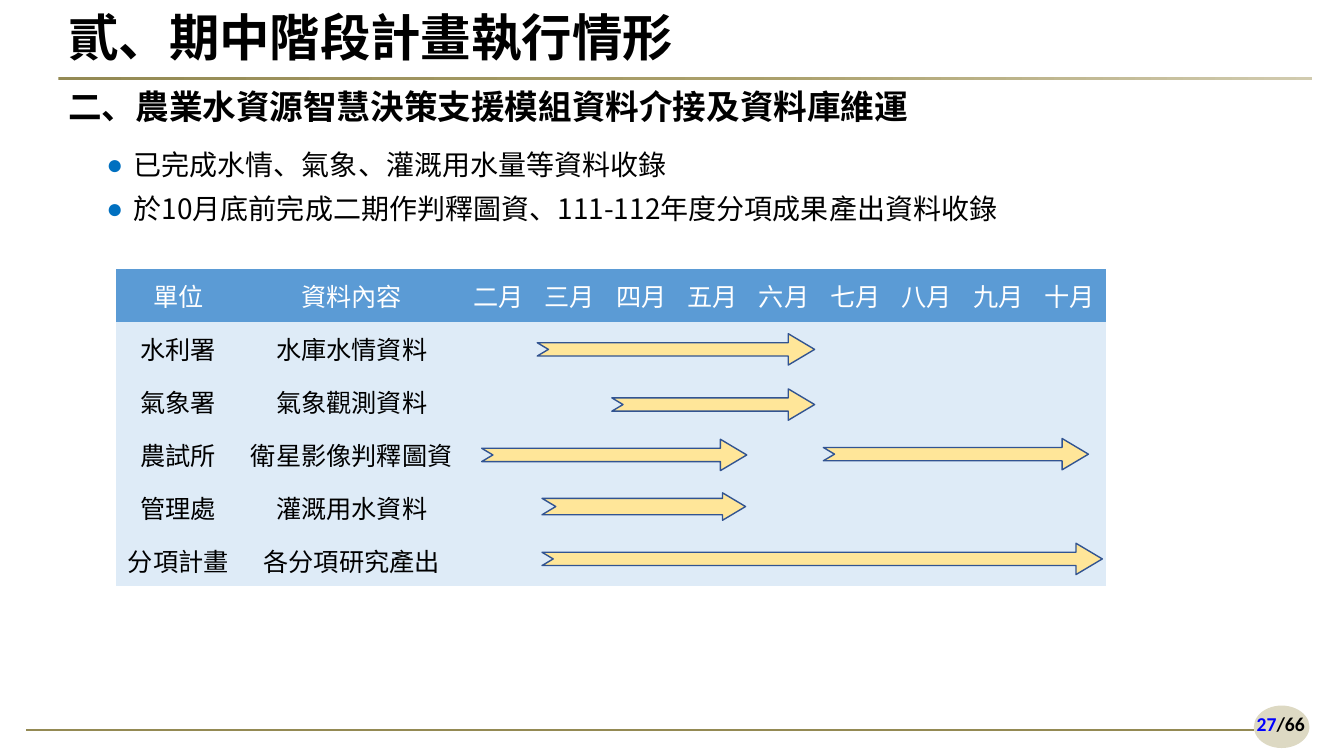
from copy import deepcopy
from dataclasses import dataclass

from lxml.etree import SubElement as sub
from pptx import Presentation
from pptx.dml.color import RGBColor as Rgb
from pptx.enum.shapes import MSO_CONNECTOR as Link, MSO_SHAPE as Kind
from pptx.enum.text import MSO_ANCHOR as Anchor, PP_ALIGN as Align
from pptx.oxml.ns import qn
from pptx.util import Cm, Pt


@dataclass(frozen=True)
class Theme:
    face: str = "Noto Sans CJK SC"
    latin: str = "Calibri"
    black: str = "000000"
    white: str = "FFFFFF"
    gold: str = "948A54"
    fade: tuple = ((0, "948A54"), (0.55, "AA9F6A"), (1, "D1CBAF"))
    badge: str = "DDD9C3"
    page: str = "0000FF"
    dot: str = "0070C0"
    head: str = "5B9BD5"
    body: str = "DEEBF7"
    arrow: str = "FFE699"
    edge: str = "325491"
    title: int = 36
    sub: int = 24
    list: int = 20
    cell: int = 18
    foot: int = 14


THEME = Theme()
HEADS = ["單位", "資料內容"] + [f"{m}月" for m in "二三四五六七八九十"]
ROWS = [
    ("水利署", "水庫水情資料"),
    ("氣象署", "氣象觀測資料"),
    ("農試所", "衛星影像判釋圖資"),
    ("管理處", "灌溉用水資料"),
    ("分項計畫", "各分項研究產出"),
]
WIDTHS = [3.15, 5.59] + [1.8] * 9
SPANS = [
    (10.62, 1.63, 6.99, 0.79, 0.425),
    (12.5, 3.02, 5.11, 0.79, 0.425),
    (9.22, 4.29, 6.68, 0.79, 0.425),
    (17.83, 4.27, 6.68, 0.79, 0.425),
    (10.74, 5.64, 5.13, 0.69, 0.6),
    (10.74, 6.91, 14.12, 0.79, 0.425),
]
ITEMS = [
    "已完成水情、氣象、灌溉用水量等資料收錄",
    "於10月底前完成二期作判釋圖資、111-112年度分項成果產出資料收錄",
]


def style(run, size, color, bold=False, face=THEME.face):
    font = run.font
    font.size, font.bold, font.name = Pt(size), bold, face
    font.color.rgb = Rgb.from_string(color)
    sub(run._r.get_or_add_rPr(), qn("a:ea")).set("typeface", face)


def paint(fill, color):
    fill.solid()
    fill.fore_color.rgb = Rgb.from_string(color)


def add_form(slide, kind, x, y, w, h):
    form = slide.shapes.add_shape(kind, Cm(x), Cm(y), Cm(w), Cm(h))
    form.shadow.inherit = False
    form.line.fill.background()
    return form


def add_box(slide, x, y, w, h, text):
    frame = slide.shapes.add_textbox(Cm(x), Cm(y), Cm(w), Cm(h)).text_frame
    frame.word_wrap = True
    frame.text = text
    return frame


def add_head(slide, x, y, w):
    bar = add_form(slide, Kind.RECTANGLE, x, y + 1.9, w, 0.1)
    bar.fill.gradient()
    bar.fill.gradient_angle = 0
    stops = bar._element.spPr.find(".//" + qn("a:gsLst"))
    stops.append(deepcopy(stops[0]))
    for stop, (place, color) in zip(bar.fill.gradient_stops, THEME.fade):
        stop.position = place
        stop.color.rgb = Rgb.from_string(color)
    title = add_box(slide, x, y, 30.07, 1.98, "貳、期中階段計畫執行情形")
    title.vertical_anchor = Anchor.MIDDLE
    title.paragraphs[0].line_spacing = 0.9
    style(title.paragraphs[0].runs[0], THEME.title, THEME.black, True)
    topic = add_box(slide, x, y + 2, w, 1.4,
                    "二、農業水資源智慧決策支援模組資料介接及資料庫維運")
    topic.paragraphs[0].alignment = Align.JUSTIFY
    style(topic.paragraphs[0].runs[0], THEME.sub, THEME.black, True)


def add_list(slide, x, y, w, h):
    frame = add_box(slide, x, y, w, h, "\n".join(ITEMS))
    for para in frame.paragraphs:
        props = para._p.get_or_add_pPr()
        props.set("marL", str(Cm(1.24)))
        props.set("indent", str(Cm(-0.69)))
        tint = sub(props, qn("a:buClr"))
        sub(tint, qn("a:srgbClr")).set("val", THEME.dot)
        sub(props, qn("a:buFont")).set("typeface", "Arial")
        sub(props, qn("a:buChar")).set("char", "●")
        para.alignment = Align.JUSTIFY
        para.line_spacing = 1.3
        style(para.runs[0], THEME.list, THEME.black)


def add_plan(slide, x, y, h):
    count = len(ROWS) + 1
    frame = slide.shapes.add_table(count, len(HEADS), Cm(x), Cm(y),
                                   Cm(sum(WIDTHS)), Cm(h))
    table = frame.table
    table.first_row = table.horz_banding = False
    look = table._tbl.tblPr.find(qn("a:tableStyleId"))
    look.text = "{2D5ABB26-0587-4C30-8999-92F81FD0307C}"
    for col, width in zip(table.columns, WIDTHS):
        col.width = Cm(width)
    for r, texts in enumerate([HEADS] + ROWS):
        table.rows[r].height = Cm(h / count)
        for c in range(len(HEADS)):
            cell = table.cell(r, c)
            paint(cell.fill, THEME.body if r else THEME.head)
            cell.vertical_anchor = Anchor.MIDDLE
            cell.margin_left = cell.margin_right = Cm(0.1)
            if c < len(texts):
                cell.text = texts[c]
                para = cell.text_frame.paragraphs[0]
                para.alignment = Align.CENTER
                style(para.runs[0], THEME.cell,
                      THEME.black if r else THEME.white)
    for left, top, width, high, shaft in SPANS:
        arrow = add_form(slide, Kind.NOTCHED_RIGHT_ARROW,
                         x + left, y + top, width, high)
        arrow.adjustments[0], arrow.adjustments[1] = shaft, 0.84
        paint(arrow.fill, THEME.arrow)
        paint(arrow.line.fill, THEME.edge)
        arrow.line.width = Pt(1)


def add_foot(slide, x, y, w):
    end = x + w
    badge = add_form(slide, Kind.OVAL, end, y - 0.61, 1.4, 1.07)
    paint(badge.fill, THEME.badge)
    rule = slide.shapes.add_connector(Link.STRAIGHT, Cm(x), Cm(y),
                                      Cm(end), Cm(y))
    rule.line.width = Pt(1.8)
    paint(rule.line.fill, THEME.gold)
    sub(rule._element.spPr, qn("a:effectLst"))
    para = add_box(slide, end - 0.18, y - 0.58, 1.93, 1.02, "27").paragraphs[0]
    para.add_run().text = "/66"
    for run, color in zip(para.runs, (THEME.page, THEME.black)):
        style(run, THEME.foot, color, True, THEME.latin)


def main():
    deck = Presentation()
    deck.slide_width, deck.slide_height = Cm(33.87), Cm(19.05)
    slide = deck.slides.add_slide(deck.slide_layouts[6])
    add_head(slide, 1.47, 0.03, 31.6)
    add_foot(slide, 0.66, 18.39, 30.94)
    add_plan(slide, 2.92, 6.78, 8)
    add_list(slide, 1.88, 3.35, 26.85, 2.36)
    deck.save("out.pptx")


if __name__ == "__main__":
    main()
